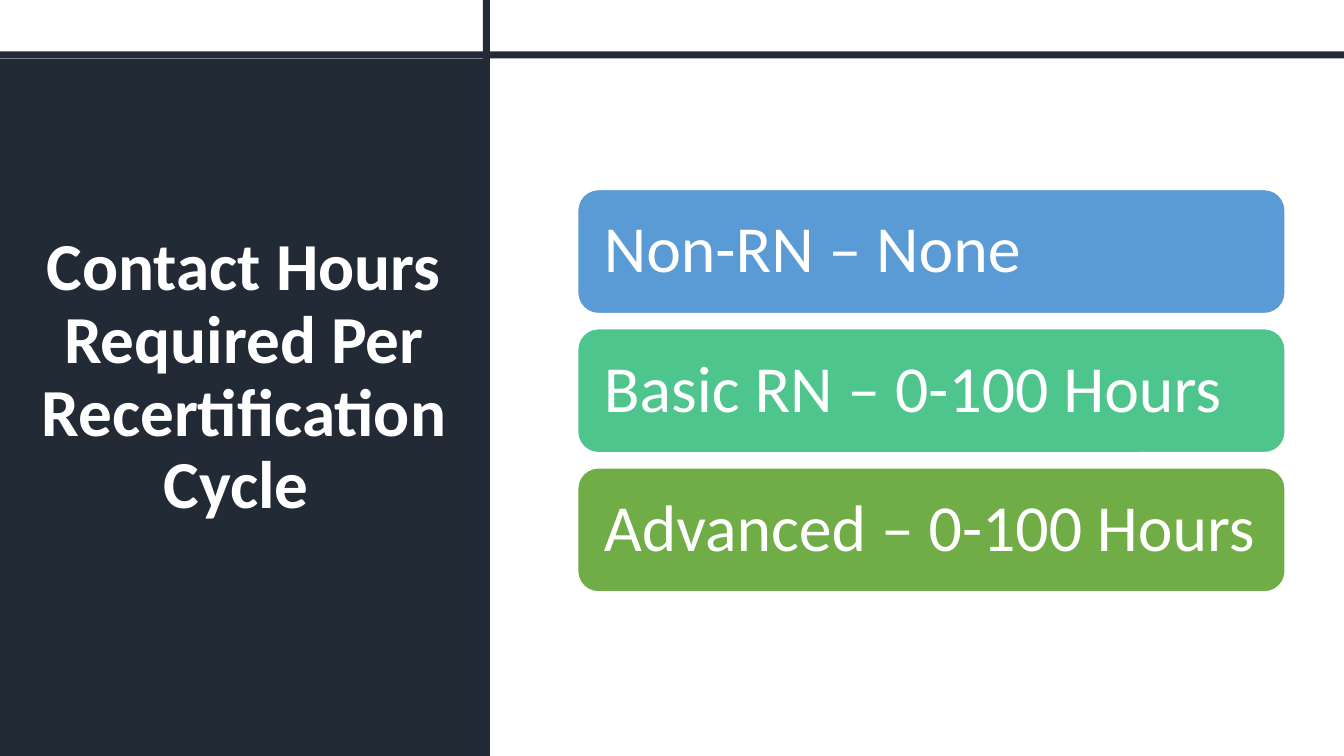
"""Builds the slide on contact hours required per recertification cycle."""
from pptx import Presentation
from pptx.dml.color import RGBColor
from pptx.enum.shapes import MSO_SHAPE as Kind
from pptx.enum.text import MSO_ANCHOR as Anchor, MSO_AUTO_SIZE as Fit, PP_ALIGN as Align
from pptx.util import Pt


def block(kind, box, color):
    item = slide.shapes.add_shape(kind, *map(Pt, box))
    item.shadow.inherit = False
    item.fill.solid()
    item.fill.fore_color.rgb = RGBColor.from_string(color)
    item.line.fill.background()
    return item


def write(item, text, align, size, bold, pads):
    frame = item.text_frame
    frame.text = text
    look = {"word_wrap": True, "auto_size": Fit.NONE, "vertical_anchor": Anchor.MIDDLE}
    look.update(zip(("margin_left", "margin_top", "margin_right", "margin_bottom"), map(Pt, pads)))
    for key, value in look.items():
        setattr(frame, key, value)
    para = frame.paragraphs[0]
    para.alignment = align
    para.line_spacing = 0.9
    font = para.runs[0].font
    for key, value in {"name": "Calibri", "size": Pt(size), "bold": bold}.items():
        setattr(font, key, value)
    font.color.rgb = RGBColor.from_string("FFFFFF")


deck = Presentation()
deck.slide_width, deck.slide_height = Pt(960), Pt(540)
slide = deck.slides.add_slide(deck.slide_layouts[5])

title = slide.shapes.title
place = {"left": 21, "top": 60.5, "width": 306.5, "height": 419}
for key, value in place.items():
    setattr(title, key, Pt(value))
write(title, "Contact Hours Required Per Recertification Cycle ", Align.CENTER, 48, True,
      (7.2, 3.6, 7.2, 3.6))

panel = block(Kind.RECTANGLE, (0, 41.8, 350, 498.2), "222A35")
title.element.addprevious(panel.element)
for box in ((345, 0, 5, 540), (0, 36.8, 960, 5)):
    block(Kind.RECTANGLE, box, "222A35")

cards = (
    ("Non-RN – None", "5B9BD5"),
    ("Basic RN – 0-100 Hours", "4DC58D"),
    ("Advanced – 0-100 Hours", "70AD47"),
)
for row, (text, color) in enumerate(cards):
    card = block(Kind.ROUNDED_RECTANGLE, (412.6, 135.4 + 99.4 * row, 505.4, 88.6), color)
    card.line.color.rgb = RGBColor.from_string("FFFFFF")
    card.line.width = Pt(1)
    write(card, text, Align.LEFT, 47, False, (14.4, 14.4, 8, 14.4))

deck.save("out.pptx")
